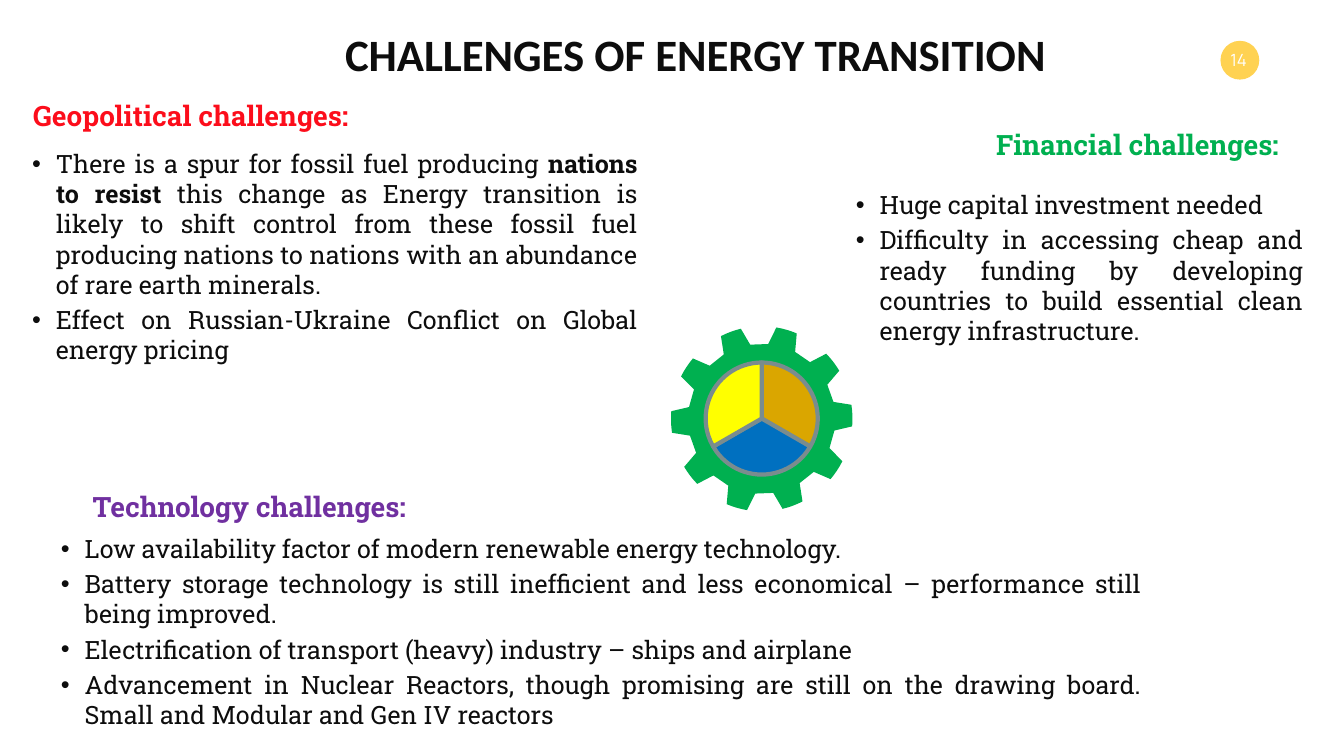
from math import cos, radians, sin
from typing import NamedTuple

from lxml.etree import SubElement
from pptx import Presentation
from pptx.chart.data import CategoryChartData
from pptx.dml.color import RGBColor
from pptx.enum.chart import XL_CHART_TYPE as Chart
from pptx.enum.shapes import MSO_SHAPE as Preset
from pptx.enum.text import MSO_ANCHOR as Anchor
from pptx.enum.text import MSO_AUTO_SIZE as Fit
from pptx.enum.text import PP_ALIGN as Align
from pptx.oxml.ns import qn
from pptx.util import Inches, Pt

WHITE = RGBColor(0xFF, 0xFF, 0xFF)
INK = RGBColor(0x0D, 0x0D, 0x0D)
BADGE = RGBColor(0xFF, 0xD2, 0x52)
RED = RGBColor(0xFC, 0x0D, 0x1B)
GREEN = RGBColor(0x00, 0xB0, 0x50)
PURPLE = RGBColor(0x70, 0x30, 0xA0)
GOLD = RGBColor(0xDA, 0xA6, 0x00)
BLUE = RGBColor(0x00, 0x70, 0xC0)
YELLOW = RGBColor(0xFF, 0xFF, 0x00)
GREY = RGBColor(0x7A, 0x8C, 0x8E)

SLAB = "Roboto Slab"
INDENT = Inches(0.47)


class Box(NamedTuple):
    left: float
    top: float
    width: float
    height: float

    def place(self) -> list[int]:
        return [Inches(side) for side in self]


class Topic(NamedTuple):
    head: str
    color: RGBColor
    head_box: Box
    body_box: Box
    points: list[list[str]]  # each point alternates plain and bold runs


TOPICS = [
    Topic("Financial challenges:", GREEN,
          Box(19.66, 2.47, 6.56, 0.77), Box(16.9, 3.72, 9.03, 3.23),
          [["Huge capital investment needed"],
           ["Difficulty in accessing cheap and ready funding by developing "
            "countries to build essential clean energy infrastructure."]]),
    Topic("Geopolitical challenges:", RED,
          Box(0.56, 1.91, 7.36, 0.77), Box(0.56, 2.9, 12.17, 4.44),
          [["There is a spur for fossil fuel producing ", "nations to resist ",
            "this change as Energy transition is likely to shift control from "
            "these fossil fuel producing nations to nations with an abundance "
            "of rare earth minerals."],
           ["Effect on Russian-Ukraine Conflict on Global energy pricing"]]),
    Topic("Technology challenges:", PURPLE,
          Box(1.74, 9.65, 7.21, 0.77), Box(1.13, 10.54, 21.6, 4.07),
          [["Low availability factor of modern renewable energy technology."],
           ["Battery storage technology is still inefficient and less "
            "economical – performance still being improved."],
           ["Electrification of transport (heavy) industry – ships and airplane"],
           ["Advancement in Nuclear Reactors, though promising are still on the "
            "drawing board. Small and Modular and Gen IV reactors"]]),
]


def write(shape, points: list[list[str]], *, size: float, color: RGBColor,
          font: str = SLAB, bold: bool = False, align=Align.LEFT,
          anchor=Anchor.TOP, wrap: bool = False, bullet: bool = False) -> None:
    frame = shape.text_frame
    frame.word_wrap = wrap
    frame.auto_size = Fit.SHAPE_TO_FIT_TEXT
    frame.vertical_anchor = anchor
    if bullet:
        frame.margin_left = frame.margin_right = Inches(0.08)
        frame.margin_top = frame.margin_bottom = Inches(0.04)
    for i, runs in enumerate(points):
        para = frame.add_paragraph() if i else frame.paragraphs[0]
        para.alignment = align
        if i:
            para.space_before = Pt(size * 0.2)
        if bullet:
            props = para._p.get_or_add_pPr()
            props.set("marL", str(INDENT))
            props.set("indent", str(-INDENT))
            SubElement(props, qn("a:buFont")).set("typeface", "Arial")
            SubElement(props, qn("a:buChar")).set("char", "•")
        for j, text in enumerate(runs):
            run = para.add_run()
            run.text = text
            run.font.name = font
            run.font.size = Pt(size)
            run.font.bold = bold or j % 2 == 1
            run.font.color.rgb = color


def add_text(slide, box: Box, points: list[list[str]], **look) -> None:
    write(slide.shapes.add_textbox(*box.place()), points, **look)


def paint(shape, color: RGBColor) -> None:
    shape.shadow.inherit = False
    shape.fill.solid()
    shape.fill.fore_color.rgb = color
    shape.line.fill.background()


def add_gear(slide, x: float, y: float, teeth: int = 10) -> None:
    def spot(radius: float, angle: float) -> tuple[int, int]:
        turn = radians(angle)
        return (Inches(x + radius * cos(turn)),
                Inches(y - 1.02 * radius * sin(turn)))

    # Angle from the middle of a tooth, and radius there
    tooth = [(-11, 1.46), (-6.7, 1.8), (-3.3, 1.8), (0, 1.8),
             (3.3, 1.8), (6.7, 1.8), (11, 1.46)]
    rim = [spot(radius, 2 + 360 / teeth * i + angle)
           for i in range(teeth) for angle, radius in tooth]
    hole = [spot(0.82, -angle) for angle in range(0, 360, 10)]
    path = slide.shapes.build_freeform(*rim[0])
    path.add_line_segments(rim[1:], close=True)
    path.move_to(*hole[0])
    path.add_line_segments(hole[1:], close=True)
    paint(path.convert_to_shape(), GREEN)


def add_pie(slide, box: Box) -> None:
    data = CategoryChartData()
    data.categories = ["1", "2", "3"]
    data.add_series("Series 1", [33, 33, 33])
    chart = slide.shapes.add_chart(Chart.PIE, *box.place(), data).chart
    chart.has_title = chart.has_legend = False
    chart.font.name = "Calibri"
    chart.font.size = Pt(10)
    plot = chart.plots[0]
    plot.vary_by_categories = True
    for i, color in enumerate([GOLD, BLUE, YELLOW]):
        part = plot.series[0].points[i].format
        part.fill.solid()
        part.fill.fore_color.rgb = color
        part.line.color.rgb = GREY
        part.line.width = Pt(6)


def main() -> None:
    deck = Presentation()
    deck.slide_width, deck.slide_height = Inches(26.66), Inches(15)
    slide = deck.slides.add_slide(deck.slide_layouts[5])

    # Page number
    disc = Box(24.21, 0.81, 0.77, 0.77)
    paint(slide.shapes.add_shape(Preset.OVAL, *disc.place()), BADGE)
    add_text(slide, Box(24.17, 0.79, 0.8, 0.8), [["14"]], size=24, color=WHITE,
             font="Manrope", align=Align.CENTER, anchor=Anchor.MIDDLE)

    # Title
    title = slide.shapes.title
    title.left, title.top, title.width, title.height = Box(
        6.34, 0.48, 14.91, 1.18).place()
    write(title, [["CHALLENGES OF ENERGY TRANSITION"]], size=64, color=INK,
          font="Calibri", bold=True, align=Align.CENTER)

    # Gear with the pie in its middle
    add_gear(slide, 15.11, 8.31)
    add_pie(slide, Box(13.86, 7.05, 2.5, 2.51))

    # Topics
    for topic in TOPICS:
        add_text(slide, topic.head_box, [[topic.head]], size=40,
                 color=topic.color, bold=True, anchor=Anchor.BOTTOM)
        add_text(slide, topic.body_box, topic.points, size=36, color=INK,
                 align=Align.JUSTIFY, wrap=True, bullet=True)

    deck.save("out.pptx")


if __name__ == "__main__":
    main()
